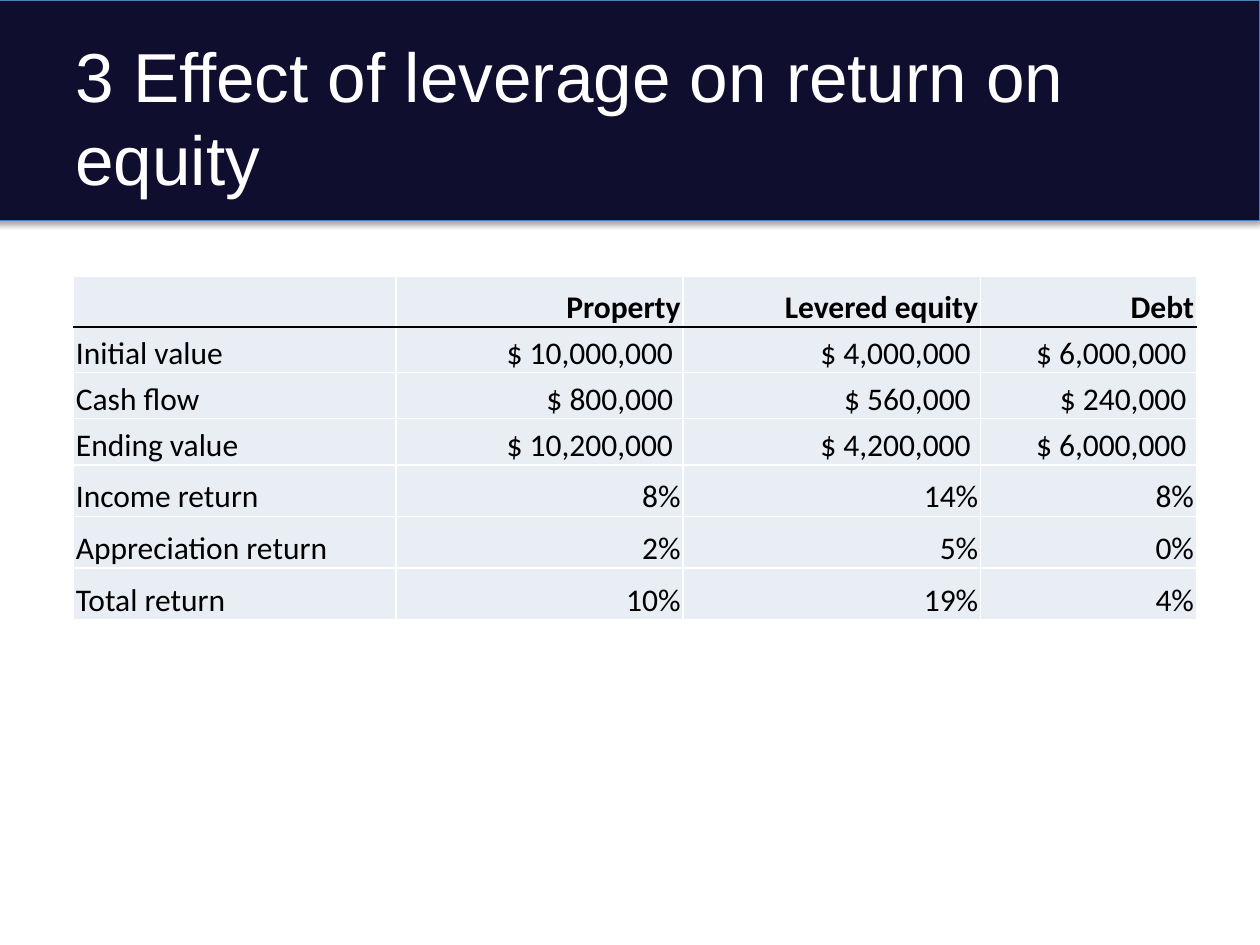
from lxml.etree import SubElement
from pptx import Presentation
from pptx.dml.color import RGBColor
from pptx.enum.shapes import MSO_SHAPE
from pptx.enum.text import MSO_ANCHOR, PP_ALIGN
from pptx.oxml import parse_xml
from pptx.oxml.ns import nsdecls, qn
from pptx.util import Cm, Pt

COLORS = {
    "navy": "100E2F",
    "outline": "4B7EBC",
    "cell": "E9EDF4",
    "white": "FFFFFF",
    "black": "000000",
}
COLUMN_WIDTHS = [6.5, 5.79, 6, 4.35]
ROW_HEIGHTS = [1.03, 0.92, 0.93, 0.93, 1.04, 1.04, 1.04]
RETURNS = [
    ["", "Property", "Levered equity", "Debt"],
    ["Initial value", "$ 10,000,000", "$ 4,000,000", "$ 6,000,000"],
    ["Cash flow", "$ 800,000", "$ 560,000", "$ 240,000"],
    ["Ending value", "$ 10,200,000", "$ 4,200,000", "$ 6,000,000"],
    ["Income return", "8%", "14%", "8%"],
    ["Appreciation return", "2%", "5%", "0%"],
    ["Total return", "10%", "19%", "4%"],
]


class SlideBuilder:
    title_font, title_size = "Arial", 39.6
    table_font, table_size = "Calibri", 18

    def __init__(self, slide):
        self.slide = slide

    def color(self, name):
        return RGBColor.from_string(COLORS[name])

    def format_runs(self, paragraph, font, size, color, bold=False):
        for run in paragraph.runs:
            run.font.name = font
            run.font.size = Pt(size)
            run.font.bold = bold
            run.font.color.rgb = self.color(color)

    def band(self, left, top, width, height):
        shape = self.slide.shapes.add_shape(
            MSO_SHAPE.RECTANGLE, Cm(left), Cm(top), Cm(width), Cm(height))
        shape.fill.solid()
        shape.fill.fore_color.rgb = self.color("navy")
        shape.line.color.rgb = self.color("outline")
        shape.line.width = Pt(0.75)
        shape.shadow.inherit = False
        effects = shape.element.spPr.find(qn("a:effectLst"))
        shadow = SubElement(effects, qn("a:outerShdw"), blurRad=str(Pt(3.1)),
                            dist=str(Pt(1.8)), dir="5400000", rotWithShape="0")
        shade = SubElement(shadow, qn("a:srgbClr"), val=COLORS["black"])
        SubElement(shade, qn("a:alpha"), val="35000")

    def title(self, text, left, top, width, height):
        box = self.slide.shapes.add_textbox(Cm(left), Cm(top), Cm(width), Cm(height))
        text_frame = box.text_frame
        text_frame.word_wrap = True
        text_frame.vertical_anchor = MSO_ANCHOR.MIDDLE
        text_frame.text = text
        self.format_runs(text_frame.paragraphs[0], self.title_font, self.title_size, "white")

    def borders(self, cell, top, bottom):
        """Draw 1 pt cell edges: white at the sides, named colours above and below."""
        properties = cell._tc.get_or_add_tcPr()
        edges = {"lnL": "white", "lnR": "white", "lnT": top, "lnB": bottom}
        for position, (tag, color) in enumerate(edges.items()):
            properties.insert(position, parse_xml(
                f'<a:{tag} {nsdecls("a")} w="{Pt(1)}"><a:solidFill>'
                f'<a:srgbClr val="{COLORS[color]}"/></a:solidFill></a:{tag}>'))

    def cell(self, cell, text, row, column):
        cell.fill.solid()
        cell.fill.fore_color.rgb = self.color("cell")
        cell.vertical_anchor = MSO_ANCHOR.BOTTOM
        cell.margin_left = cell.margin_top = Cm(0.05)
        cell.margin_right = Cm(0.2 if text.startswith("$") else 0.05)
        cell.margin_bottom = 0
        cell.text_frame.text = text
        paragraph = cell.text_frame.paragraphs[0]
        paragraph.alignment = PP_ALIGN.RIGHT if column else PP_ALIGN.LEFT
        self.format_runs(paragraph, self.table_font, self.table_size, "black", bold=row == 0)
        self.borders(cell, top="black" if row == 1 else "white",
                     bottom="black" if row == 0 else "white")

    def table(self, rows, left, top, widths, heights):
        table = self.slide.shapes.add_table(
            len(rows), len(widths), Cm(left), Cm(top),
            Cm(sum(widths)), Cm(sum(heights))).table
        table.horz_banding = False
        for column, width in zip(table.columns, widths):
            column.width = Cm(width)
        for table_row, height in zip(table.rows, heights):
            table_row.height = Cm(height)
        for row, texts in enumerate(rows):
            for column, text in enumerate(texts):
                self.cell(table.cell(row, column), text, row, column)


def main():
    presentation = Presentation()
    presentation.slide_width, presentation.slide_height = Cm(25.4), Cm(19.05)
    builder = SlideBuilder(presentation.slides.add_slide(presentation.slide_layouts[6]))
    builder.band(-0.1, 0, 25.5, 4.45)
    builder.title("3 Effect of leverage on return on equity", 1.27, 0.76, 22.86, 3.18)
    builder.table(RETURNS, 1.48, 5.56, COLUMN_WIDTHS, ROW_HEIGHTS)
    presentation.save("out.pptx")


if __name__ == "__main__":
    main()
